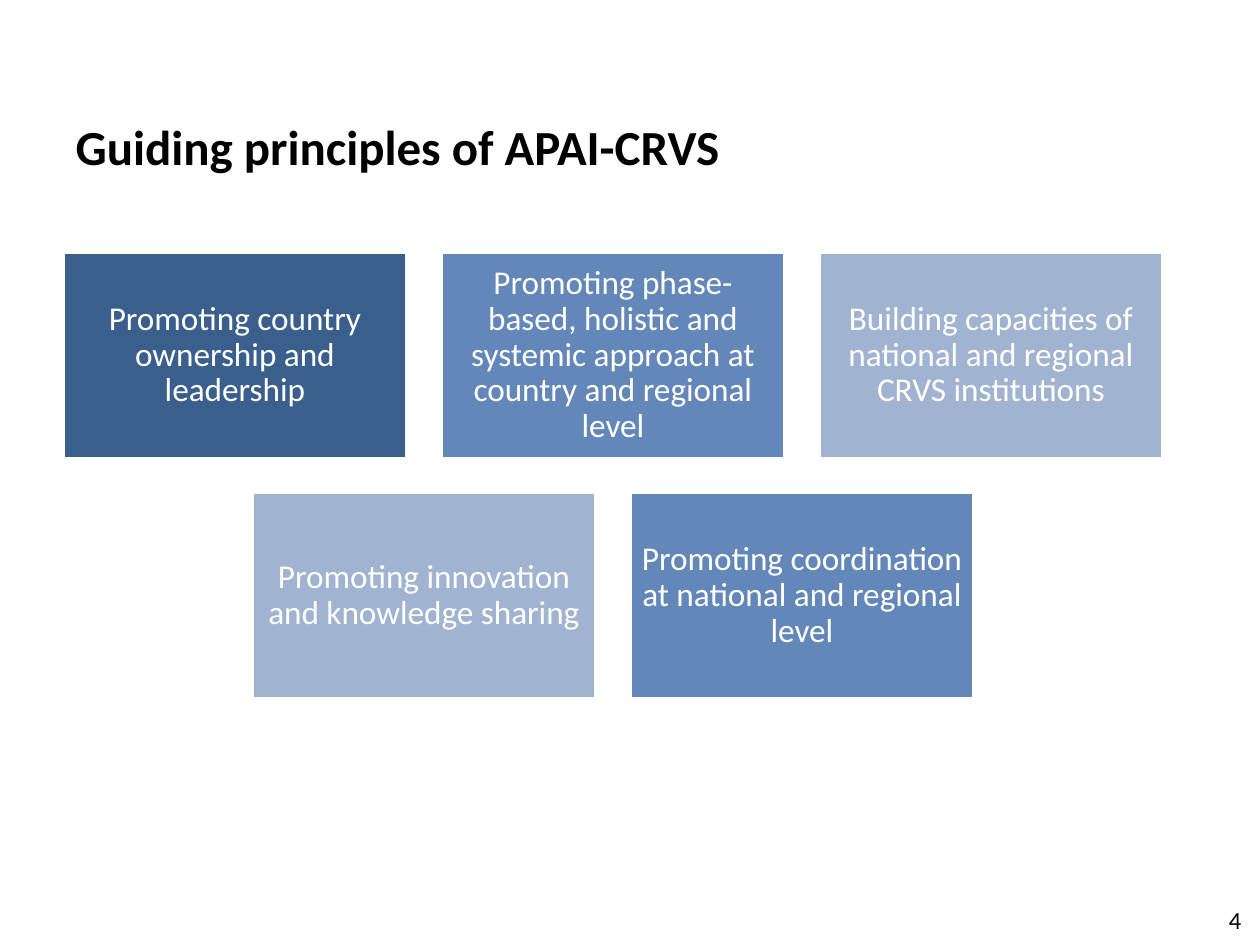
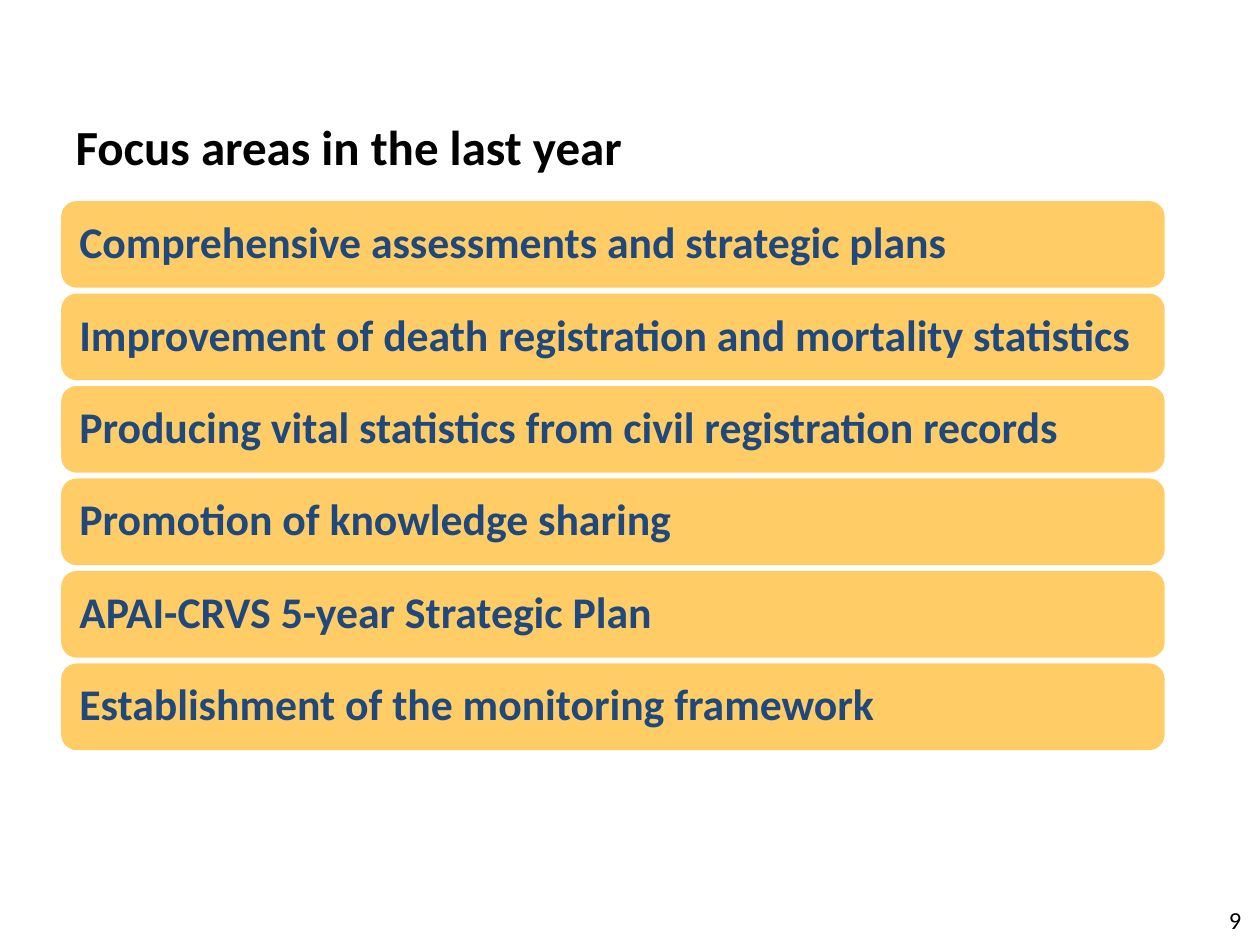
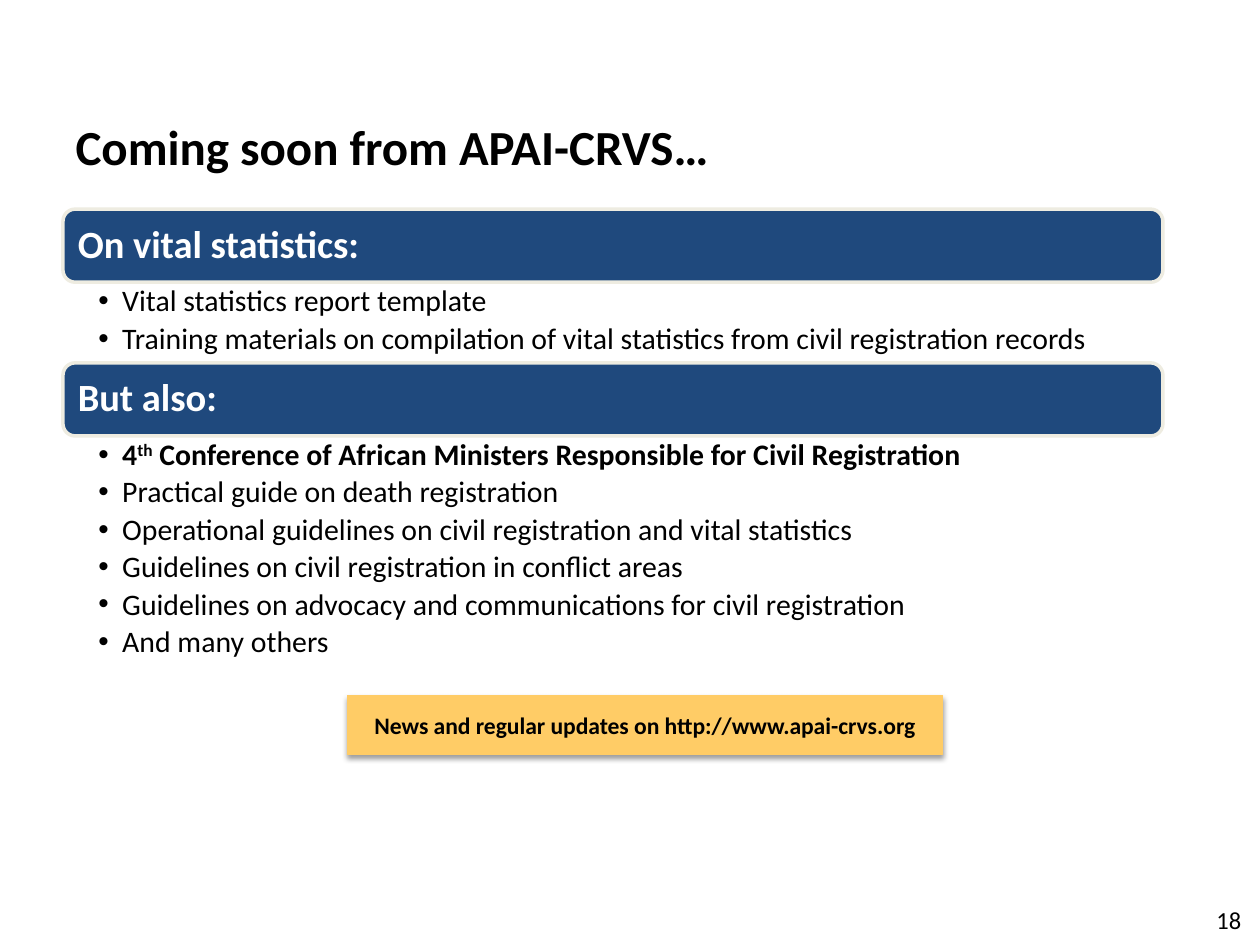
from dataclasses import dataclass

from lxml import etree
from pptx import Presentation
from pptx.dml.color import RGBColor
from pptx.enum.shapes import MSO_SHAPE
from pptx.enum.text import MSO_ANCHOR, MSO_AUTO_SIZE, PP_ALIGN
from pptx.oxml.ns import qn
from pptx.util import Inches, Pt

RECTANGLE, ROUNDED = MSO_SHAPE.RECTANGLE, MSO_SHAPE.ROUNDED_RECTANGLE
LEFT, CENTER, RIGHT = PP_ALIGN.LEFT, PP_ALIGN.CENTER, PP_ALIGN.RIGHT
TOP, MIDDLE = MSO_ANCHOR.TOP, MSO_ANCHOR.MIDDLE
NO_AUTOFIT = MSO_AUTO_SIZE.NONE
TITLE_ONLY, TWO_CONTENT = 5, 3


@dataclass(frozen=True)
class Theme:
    font: str = "Calibri"
    black: str = "000000"
    white: str = "FFFFFF"
    navy: str = "1F497D"
    cream: str = "EEECE1"
    amber: str = "FFCC66"
    dark_blue: str = "3A5F8C"
    mid_blue: str = "6387B9"
    pale_blue: str = "A0B3D1"
    title_size: float = 28
    focus_size: float = 25
    heading_size: float = 22
    principle_size: float = 19
    list_size: float = 17
    number_size: float = 14
    callout_size: float = 13.5
    outline: float = 2
    tight_lines: float = 0.9


@dataclass(frozen=True)
class Box:
    """A region of the slide, in inches."""
    left: float
    top: float
    width: float
    height: float

    def lengths(self):
        return [Inches(value) for value in (self.left, self.top, self.width, self.height)]


THEME = Theme()
TITLE_BOX = Box(0.5, 0.87, 8.73, 0.57)
NUMBER_BOX = Box(7.62, 7.13, 2.33, 0.4)
PRINCIPLES_BOX = Box(0.5, 2, 8.73, 3.55)
FOCUS_BOX = Box(0.5, 1.61, 8.73, 4.33)
COMING_BOX = Box(0.5, 1.66, 8.73, 3.74)
CALLOUT_BOX = Box(2.76, 5.52, 4.72, 0.47)

WIDE_INSET, NARROW_INSET = 0.2, 0.08
PRINCIPLE_ROWS = [
    [("Promoting country ownership and leadership", THEME.dark_blue, NARROW_INSET),
     ("Promoting phase-based, holistic and systemic approach at country and regional level",
      THEME.mid_blue, WIDE_INSET),
     ("Building capacities of national and regional CRVS institutions",
      THEME.pale_blue, NARROW_INSET)],
    [("Promoting innovation and knowledge sharing", THEME.pale_blue, NARROW_INSET),
     ("Promoting coordination at national and regional level",
      THEME.mid_blue, NARROW_INSET)],
]
FOCUS_AREAS = [
    "Comprehensive assessments and strategic plans",
    "Improvement of death registration and mortality statistics",
    "Producing vital statistics from civil registration records",
    "Promotion of knowledge sharing",
    "APAI-CRVS 5-year Strategic Plan",
    "Establishment of the monitoring framework",
]
# Each list item is a sequence of (text, bold, superscript) runs.
COMING_SECTIONS = [
    ("On vital statistics:", 0.64, [
        [("Vital statistics report template", False, False)],
        [("Training materials on compilation of vital statistics from civil "
          "registration records", False, False)],
    ]),
    ("But also:", 1.94, [
        [("4", True, False), ("th", True, True),
         (" Conference of African Ministers Responsible for Civil Registration", True, False)],
        [("Practical guide on death registration", False, False)],
        [("Operational guidelines on civil registration and vital statistics", False, False)],
        [("Guidelines on civil registration in conflict areas", False, False)],
        [("Guidelines on advocacy and communications for civil registration", False, False)],
        [("And many others", False, False)],
    ]),
]


def place(shape, box):
    shape.left, shape.top, shape.width, shape.height = box.lengths()


def set_frame(frame, anchor=TOP, horizontal=0.1, vertical=0.05):
    frame.word_wrap = True
    frame.auto_size = NO_AUTOFIT
    frame.vertical_anchor = anchor
    frame.margin_left = frame.margin_right = Inches(horizontal)
    frame.margin_top = frame.margin_bottom = Inches(vertical)


def add_run(paragraph, text, size, color, bold=False):
    run = paragraph.add_run()
    run.text = text
    run.font.name = THEME.font
    run.font.size = Pt(size)
    run.font.bold = bold
    run.font.color.rgb = RGBColor.from_string(color)
    return run


def write_line(frame, text, size, color, bold=False, align=LEFT, spacing=1.0):
    paragraph = frame.paragraphs[0]
    paragraph.alignment = align
    paragraph.line_spacing = spacing
    add_run(paragraph, text, size, color, bold)


def add_panel(slide, preset, box, fill, line, line_width=THEME.outline):
    shape = slide.shapes.add_shape(preset, *box.lengths())
    shape.shadow.inherit = False
    shape.fill.solid()
    shape.fill.fore_color.rgb = RGBColor.from_string(fill)
    shape.line.color.rgb = RGBColor.from_string(line)
    shape.line.width = Pt(line_width)
    return shape


def start_slide(presentation, layout, title, number):
    slide = presentation.slides.add_slide(presentation.slide_layouts[layout])
    place(slide.shapes.title, TITLE_BOX)
    frame = slide.shapes.title.text_frame
    set_frame(frame, MIDDLE)
    write_line(frame, title, THEME.title_size, THEME.black, bold=True)
    number_frame = slide.shapes.add_textbox(*NUMBER_BOX.lengths()).text_frame
    set_frame(number_frame)
    write_line(number_frame, str(number), THEME.number_size, THEME.black, align=RIGHT)
    return slide


def add_principles(slide, box, gap=0.27):
    """Lay out rows of equal tiles, each row centred in the box."""
    columns = max(len(row) for row in PRINCIPLE_ROWS)
    rows = len(PRINCIPLE_ROWS)
    width = (box.width - gap * (columns - 1)) / columns
    height = (box.height - gap * (rows - 1)) / rows
    for row_index, row in enumerate(PRINCIPLE_ROWS):
        row_width = len(row) * (width + gap) - gap
        row_left = box.left + (box.width - row_width) / 2
        top = box.top + row_index * (height + gap)
        for column, (text, fill, inset) in enumerate(row):
            tile_box = Box(row_left + column * (width + gap), top, width, height)
            tile = add_panel(slide, RECTANGLE, tile_box, fill, THEME.white)
            set_frame(tile.text_frame, MIDDLE, inset, NARROW_INSET)
            write_line(tile.text_frame, text, THEME.principle_size, THEME.white,
                       align=CENTER, spacing=THEME.tight_lines)


def add_bar(slide, box, text, size, color, fill, line, inset):
    bar = add_panel(slide, ROUNDED, box, fill, line)
    set_frame(bar.text_frame, MIDDLE, inset, inset)
    write_line(bar.text_frame, text, size, color, bold=True, spacing=THEME.tight_lines)


def add_focus_bars(slide, box, height=0.66):
    pitch = (box.height - height) / (len(FOCUS_AREAS) - 1)
    for index, area in enumerate(FOCUS_AREAS):
        bar_box = Box(box.left, box.top + index * pitch, box.width, height)
        add_bar(slide, bar_box, area, THEME.focus_size, THEME.navy,
                THEME.amber, THEME.amber, 0.1)


def add_bullet(paragraph, indent=0.19):
    properties = paragraph._p.get_or_add_pPr()
    properties.set("marL", str(Inches(indent)))
    properties.set("indent", str(-Inches(indent)))
    etree.SubElement(properties, qn("a:buFont"), typeface="Arial")
    etree.SubElement(properties, qn("a:buChar"), char="•")


def fill_list(placeholder, box, items):
    place(placeholder, box)
    frame = placeholder.text_frame
    set_frame(frame, TOP, 0.17, 0.03)
    frame.margin_left = Inches(0.28)
    for index, item in enumerate(items):
        paragraph = frame.add_paragraph() if index else frame.paragraphs[0]
        paragraph.level = 1
        add_bullet(paragraph)
        paragraph.line_spacing = THEME.tight_lines
        paragraph.space_before = Pt(0)
        paragraph.space_after = Pt(3)
        for text, bold, superscript in item:
            run = add_run(paragraph, text, THEME.list_size, THEME.black, bold)
            if superscript:
                run._r.get_or_add_rPr().set("baseline", "30000")


def add_coming_sections(slide, box, heading_height=0.58):
    """Stack heading bars, each followed by its list."""
    bodies = [shape for shape in slide.placeholders if shape.placeholder_format.idx > 0]
    top = box.top
    for body, (heading, list_height, items) in zip(bodies, COMING_SECTIONS):
        add_bar(slide, Box(box.left, top, box.width, heading_height), heading,
                THEME.heading_size, THEME.white, THEME.navy, THEME.cream, 0.09)
        top += heading_height
        fill_list(body, Box(box.left, top, box.width, list_height), items)
        top += list_height


def add_soft_shadow(shape):
    effects = shape._element.spPr.find(qn("a:effectLst"))
    shadow = etree.SubElement(effects, qn("a:outerShdw"), blurRad=str(Pt(3.1)),
                              dist=str(Pt(1.6)), dir="5400000", rotWithShape="0")
    color = etree.SubElement(shadow, qn("a:srgbClr"), val=THEME.black)
    etree.SubElement(color, qn("a:alpha"), val="38000")


def add_callout(slide, box, text):
    callout = add_panel(slide, RECTANGLE, box, THEME.amber, THEME.amber, 0.75)
    add_soft_shadow(callout)
    set_frame(callout.text_frame, MIDDLE)
    write_line(callout.text_frame, text, THEME.callout_size, THEME.black,
               bold=True, align=CENTER)


def main():
    presentation = Presentation()
    presentation.slide_width, presentation.slide_height = Inches(10), Inches(7.5)

    slide = start_slide(presentation, TITLE_ONLY, "Guiding principles of APAI-CRVS", 4)
    add_principles(slide, PRINCIPLES_BOX)

    slide = start_slide(presentation, TITLE_ONLY, "Focus areas in the last year", 9)
    add_focus_bars(slide, FOCUS_BOX)

    slide = start_slide(presentation, TWO_CONTENT, "Coming soon from APAI-CRVS…", 18)
    add_coming_sections(slide, COMING_BOX)
    add_callout(slide, CALLOUT_BOX, "News and regular updates on http://www.apai-crvs.org")

    presentation.save("out.pptx")


if __name__ == "__main__":
    main()
